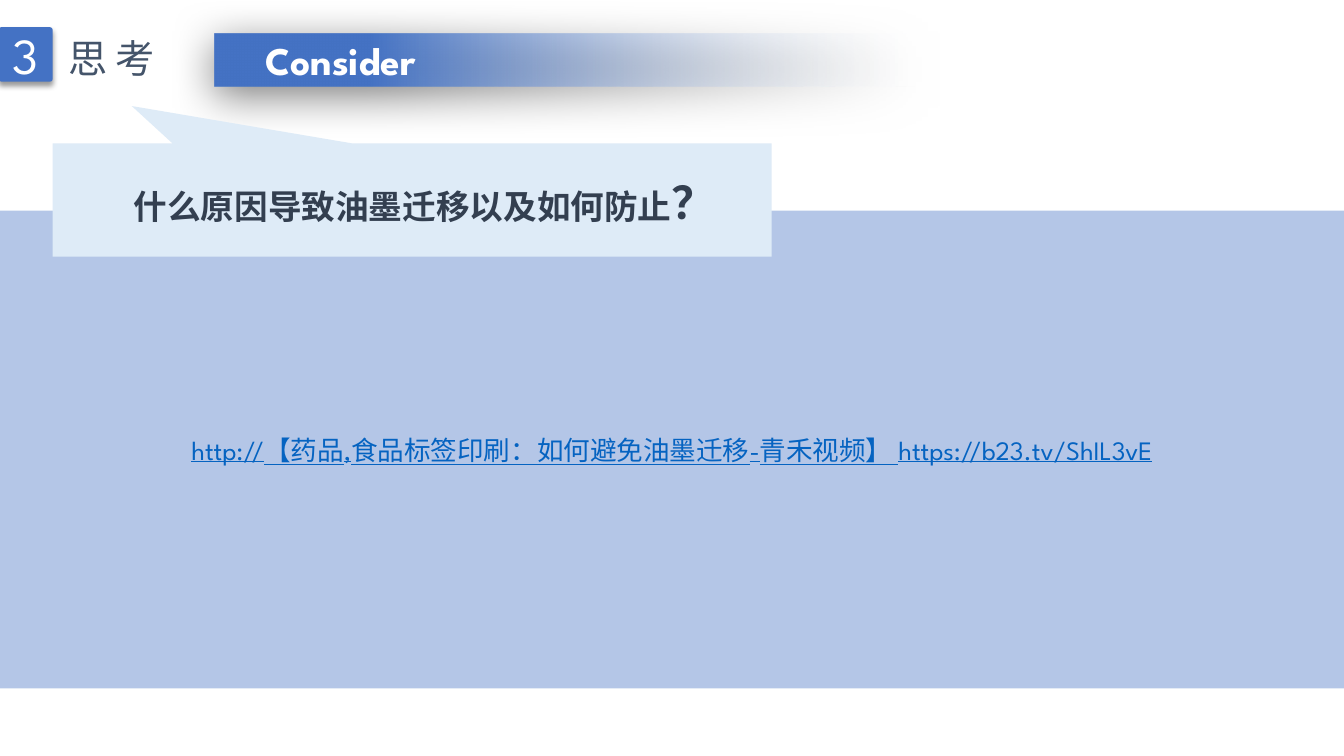
from lxml import etree
from pptx import Presentation
from pptx.dml.color import RGBColor
from pptx.enum.shapes import MSO_SHAPE
from pptx.enum.text import MSO_ANCHOR, PP_ALIGN
from pptx.oxml.ns import qn
from pptx.util import Inches, Pt

RECTANGLE = MSO_SHAPE.RECTANGLE
ROUNDED = MSO_SHAPE.ROUNDED_RECTANGLE
CALLOUT = MSO_SHAPE.RECTANGULAR_CALLOUT
LEFT, CENTER = PP_ALIGN.LEFT, PP_ALIGN.CENTER
TOP, MIDDLE = MSO_ANCHOR.TOP, MSO_ANCHOR.MIDDLE

WIDTH, HEIGHT = Inches(13.33), Inches(7.5)
LATIN, CHINESE = "League Spartan", "Noto Sans CJK SC"
BLUE, PALE, WHITE = "4472C4", "DEEBF7", "FFFFFF"
SLATE, NAVY, LINK = "44546A", "333F50", "0563C1"


def color(value):
    return RGBColor.from_string(value)


def place(left, top, width, height):
    """Turn percentages of the slide into lengths."""
    return (int(WIDTH * left / 100), int(HEIGHT * top / 100),
            int(WIDTH * width / 100), int(HEIGHT * height / 100))


def set_alpha(color_element, percent):
    alpha = etree.SubElement(color_element, qn("a:alpha"))
    alpha.set("val", str(percent * 1000))


def add_panel(slide, kind, box, fill, adjustments=(), opacity=100):
    shape = slide.shapes.add_shape(kind, *place(*box))
    shape.shadow.inherit = False
    shape.line.fill.background()
    shape.fill.solid()
    shape.fill.fore_color.rgb = color(fill)
    for index, value in enumerate(adjustments):
        shape.adjustments[index] = value
    if opacity < 100:
        set_alpha(shape.element.spPr.find(".//" + qn("a:srgbClr")), opacity)
    return shape


def fade_right(shape, solid, faded):
    """Fade the fill from a solid left side to a clear right side."""
    shape.fill.gradient()
    shape.fill.gradient_angle = 180
    for stop, position, value in zip(shape.fill.gradient_stops, (0, 0.78), (faded, solid)):
        stop.position = position
        stop.color.rgb = color(value)
    set_alpha(shape.element.spPr.find(".//" + qn("a:srgbClr")), 0)


def cast_shadow(shape, opacity, blur, distance, angle):
    effects = shape.element.spPr.find(qn("a:effectLst"))
    shadow = etree.SubElement(effects, qn("a:outerShdw"), blurRad=str(Pt(blur)),
                              dist=str(Pt(distance)), dir=str(angle * 60000),
                              algn="ctr", rotWithShape="0")
    set_alpha(etree.SubElement(shadow, qn("a:srgbClr"), val="000000"), opacity)


def write(shape, runs, font, value, align=LEFT, anchor=MIDDLE, wrap=True,
          bold=False, underline=False, spacing=0, line_spacing=1.0):
    """Fill a shape with one paragraph; runs are pairs of text and size."""
    frame = shape.text_frame
    frame.word_wrap = wrap
    frame.vertical_anchor = anchor
    paragraph = frame.paragraphs[0]
    paragraph.alignment = align
    paragraph.line_spacing = line_spacing
    for text, size in runs:
        run = paragraph.add_run()
        run.text = text
        run.font.size = Pt(size)
        run.font.name = font
        run.font.bold = bold
        run.font.underline = underline
        run.font.color.rgb = color(value)
        properties = run.font._element
        etree.SubElement(properties, qn("a:ea"), typeface=CHINESE)
        if spacing:
            properties.set("spc", str(spacing * 100))


def add_text(slide, box, runs, **style):
    write(slide.shapes.add_textbox(*place(*box)), runs, anchor=TOP, **style)


def main():
    presentation = Presentation()
    presentation.slide_width, presentation.slide_height = WIDTH, HEIGHT
    slide = presentation.slides.add_slide(presentation.slide_layouts[6])

    # Wide band with the video link
    band = add_panel(slide, RECTANGLE, (0, 27.87, 100, 63.2), BLUE, opacity=40)
    write(band, [("http://【药品,食品标签印刷：如何避免油墨迁移-青禾视频】 https://b23.tv/ShIL3vE", 19)],
          LATIN, LINK, align=CENTER, underline=True)

    # Heading: fading bar, number and section name
    bar = add_panel(slide, RECTANGLE, (15.98, 4.4, 52.14, 7.07), BLUE)
    fade_right(bar, BLUE, "F7FAFD")
    cast_shadow(bar, opacity=50, blur=31, distance=6, angle=97)
    write(bar, [("Consider", 28)], LATIN, WHITE, bold=True)
    bar.text_frame.margin_left = Inches(0.5)

    badge = add_panel(slide, ROUNDED, (-0.08, 3.6, 4, 7.2), BLUE, adjustments=[0.05])
    cast_shadow(badge, opacity=40, blur=4, distance=3, angle=90)
    write(badge, [("3", 36)], LATIN, WHITE, align=CENTER)

    add_text(slide, (4.35, 3.87, 8.55, 7.6), [("思考", 28)],
             font=CHINESE, value=SLATE, wrap=False, spacing=6)

    # Question in a callout
    add_panel(slide, CALLOUT, (3.92, 18.97, 53.49, 14.97), PALE, adjustments=[-0.39, -0.83])
    add_text(slide, (7.13, 18.93, 48.99, 12), [("什么原因导致油墨迁移以及如何防止", 24), ("？", 32)],
             font=CHINESE, value=NAVY, align=CENTER, bold=True, line_spacing=1.5)

    presentation.save("out.pptx")


if __name__ == "__main__":
    main()
